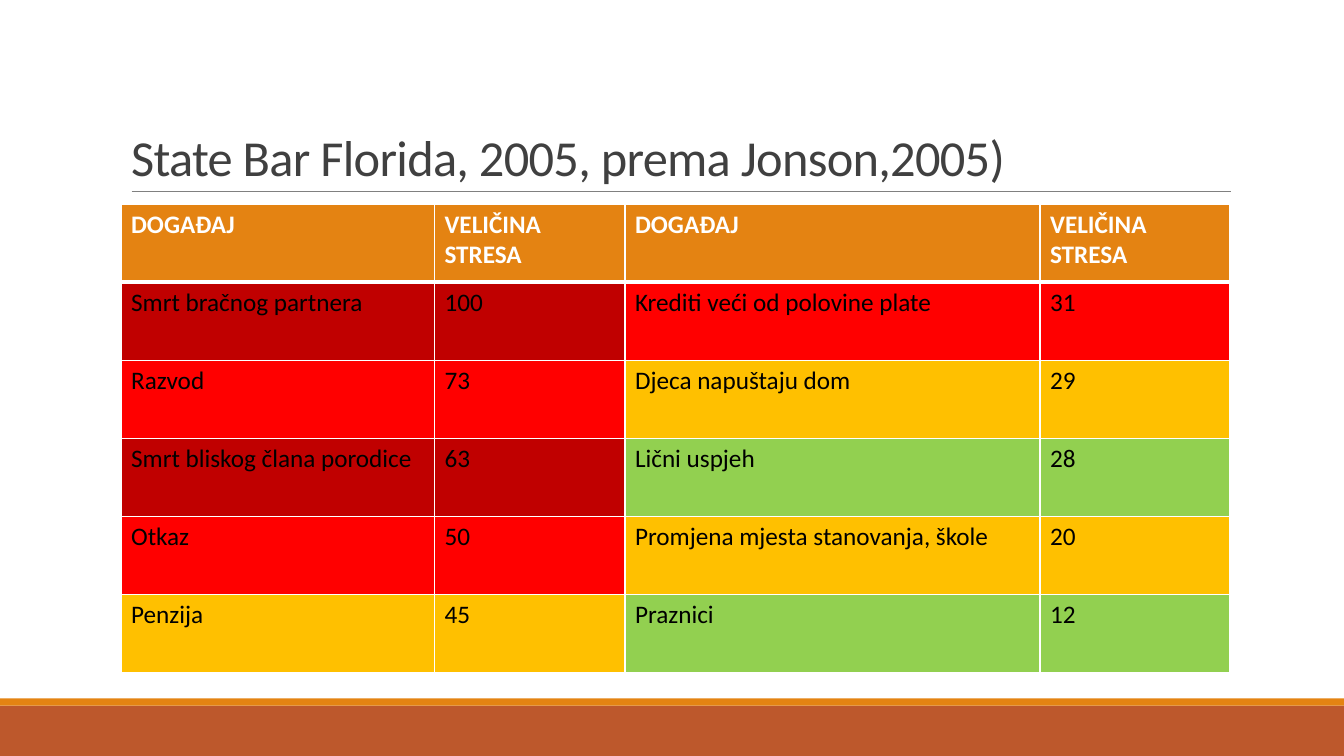
from dataclasses import dataclass

from lxml import etree
from pptx import Presentation
from pptx.dml.color import RGBColor
from pptx.enum.shapes import MSO_CONNECTOR, MSO_SHAPE
from pptx.enum.text import MSO_ANCHOR, PP_ALIGN
from pptx.oxml.ns import qn
from pptx.util import Cm, Pt

RECTANGLE = MSO_SHAPE.RECTANGLE
STRAIGHT = MSO_CONNECTOR.STRAIGHT
BOTTOM = MSO_ANCHOR.BOTTOM
LEFT = PP_ALIGN.LEFT
TITLE_ONLY = 5


@dataclass(frozen=True)
class Theme:
    font: str = "Calibri"
    title_size: int = 36
    table_size: int = 18
    title: str = "404040"
    rule: str = "808080"
    white: str = "FFFFFF"
    black: str = "000000"
    orange: str = "E48312"
    rust: str = "BD582C"
    extreme: str = "C00000"
    high: str = "FF0000"
    medium: str = "FFC000"
    low: str = "92D050"


THEME = Theme()

TITLE = "State Bar Florida, 2005, prema Jonson,2005)"
HEADINGS = ("DOGAĐAJ", "VELIČINA STRESA")
# Event, size of stress, fill
LEFT_EVENTS = [
    ("Smrt bračnog partnera", 100, THEME.extreme),
    ("Razvod", 73, THEME.high),
    ("Smrt bliskog člana porodice", 63, THEME.extreme),
    ("Otkaz", 50, THEME.high),
    ("Penzija", 45, THEME.medium),
]
RIGHT_EVENTS = [
    ("Krediti veći od polovine plate", 31, THEME.high),
    ("Djeca napuštaju dom", 29, THEME.medium),
    ("Lični uspjeh", 28, THEME.low),
    ("Promjena mjesta stanovanja, škole", 20, THEME.medium),
    ("Praznici", 12, THEME.low),
]
COLUMN_WIDTHS = (7.9, 4.8, 10.46, 4.78)
ROW_HEIGHT = 1.97


def rgb(value):
    return RGBColor.from_string(value)


def format_font(font, size, color, bold=False):
    values = {"name": THEME.font, "size": Pt(size), "bold": bold}
    for name, value in values.items():
        setattr(font, name, value)
    font.color.rgb = rgb(color)


def add_band(page, top, height, color):
    band = page.shapes.add_shape(RECTANGLE, 0, Cm(top), Cm(33.87), Cm(height))
    band.shadow.inherit = False
    band.fill.solid()
    band.fill.fore_color.rgb = rgb(color)
    band.line.fill.background()


def add_rule(page, left, right, top):
    rule = page.shapes.add_connector(STRAIGHT, Cm(left), Cm(top), Cm(right), Cm(top))
    rule.line.color.rgb = rgb(THEME.rule)
    rule.line.width = Pt(0.5)
    etree.SubElement(rule._element.spPr, qn("a:effectLst"))


def set_title(page, text):
    box = page.shapes.title
    place = {"left": Cm(3.05), "top": Cm(0.79), "width": Cm(27.94), "height": Cm(4.04)}
    for name, value in place.items():
        setattr(box, name, value)
    box.text_frame.vertical_anchor = BOTTOM
    box.text_frame.word_wrap = True
    para = box.text_frame.paragraphs[0]
    para.alignment = LEFT
    para.line_spacing = 0.85
    span = para.add_run()
    span.text = text
    format_font(span.font, THEME.title_size, THEME.title)
    span.font._element.set("spc", "-50")


def set_borders(cell, widths):
    properties = cell._tc.get_or_add_tcPr()
    for index, (side, width) in enumerate(widths.items()):
        border = etree.Element(qn(f"a:ln{side}"), w=str(Pt(width)))
        fill = etree.SubElement(border, qn("a:solidFill"))
        etree.SubElement(fill, qn("a:srgbClr"), val=THEME.white)
        properties.insert(index, border)


def fill_cell(cell, text, fill, row):
    is_header = row == 0
    cell.fill.solid()
    cell.fill.fore_color.rgb = rgb(fill)
    para = cell.text_frame.paragraphs[0]
    span = para.add_run()
    span.text = str(text)
    color = THEME.white if is_header else THEME.black
    format_font(span.font, THEME.table_size, color, is_header)
    # The line under the header is heavier
    set_borders(cell, {"L": 1, "R": 1, "T": 3 if row == 1 else 1, "B": 3 if is_header else 1})


def add_stress_table(page):
    header = (*HEADINGS, THEME.orange)
    rows = [(header, header), *zip(LEFT_EVENTS, RIGHT_EVENTS)]
    frame = page.shapes.add_table(
        len(rows), len(COLUMN_WIDTHS), Cm(3.05), Cm(5.14),
        Cm(sum(COLUMN_WIDTHS)), Cm(ROW_HEIGHT * len(rows)))
    table = frame.table
    for column, width in zip(table.columns, COLUMN_WIDTHS):
        column.width = Cm(width)
    for row, events in enumerate(rows):
        table.rows[row].height = Cm(ROW_HEIGHT)
        for half, (event, stress, fill) in enumerate(events):
            for offset, text in enumerate((event, stress)):
                fill_cell(table.cell(row, 2 * half + offset), text, fill, row)


def main():
    deck = Presentation()
    deck.slide_width = Cm(33.87)
    deck.slide_height = Cm(19.05)
    page = deck.slides.add_slide(deck.slide_layouts[TITLE_ONLY])

    # Footer bands and the line under the title
    add_band(page, 17.78, 1.27, THEME.rust)
    add_band(page, 17.6, 0.18, THEME.orange)
    add_rule(page, 3.32, 31.01, 4.83)

    # Content
    set_title(page, TITLE)
    add_stress_table(page)
    deck.save("out.pptx")


if __name__ == "__main__":
    main()
